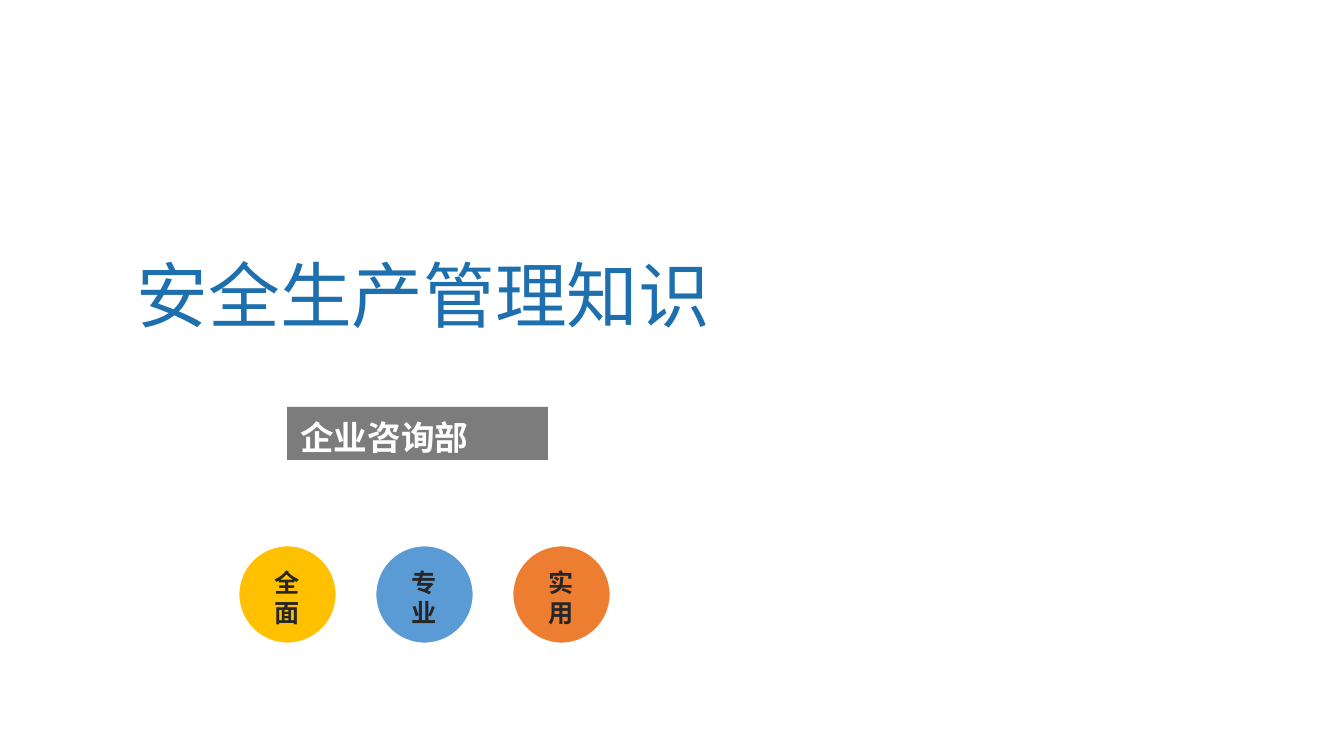
from lxml.etree import SubElement
from pptx import Presentation
from pptx.dml.color import RGBColor
from pptx.enum.shapes import MSO_SHAPE as SHAPE
from pptx.enum.text import MSO_ANCHOR as ANCHOR, PP_ALIGN as ALIGN
from pptx.oxml.ns import qn
from pptx.util import Pt

PX = 9144000 / 1344
FONT = "Noto Sans CJK SC"
COLORS = {
    "title": "1E6FAD", "bar": "7C7C7C", "white": "FFFFFF", "dark": "262626",
    "gold": "FFC000", "blue": "5B9BD5", "orange": "ED7D31",
}


def px(*values):
    return [round(v * PX) for v in values]


def write(s, text, size, color, align, anchor, spacing, top, bottom, bold=True):
    tf = s.text_frame
    tf.word_wrap = True
    tf.vertical_anchor = anchor
    tf.margin_top, tf.margin_bottom = px(top, bottom)
    p = tf.paragraphs[0]
    p.alignment = align
    p.line_spacing = spacing
    r = p.add_run()
    r.text = text
    r.font.size = Pt(size)
    r.font.bold = bold
    r.font.name = FONT
    r.font.color.rgb = RGBColor.from_string(COLORS[color])
    SubElement(r.font._element, qn("a:ea"), typeface=FONT)


prs = Presentation()
prs.slide_width, prs.slide_height = px(1344, 756)
slide = prs.slides.add_slide(prs.slide_layouts[6])

title = slide.shapes.add_textbox(*px(93, 144, 661, 193))
write(title, "安全生产管理知识", 38.4, "title", ALIGN.CENTER, ANCHOR.BOTTOM,
      1.1, 7, 0, bold=False)

bar = slide.shapes.add_shape(SHAPE.RECTANGLE, *px(287, 407, 261, 53))
bar.shadow.inherit = False
bar.fill.solid()
bar.fill.fore_color.rgb = RGBColor.from_string(COLORS["bar"])
bar.line.fill.background()
write(bar, "企业咨询部", 18, "white", ALIGN.JUSTIFY, ANCHOR.TOP, Pt(23), 7, 7)

for i, (word, color) in enumerate([("全面", "gold"), ("专业", "blue"), ("实用", "orange")]):
    s = slide.shapes.add_shape(SHAPE.OVAL, *px(238 + 137 * i, 545, 99, 99))
    s.shadow.inherit = False
    s.fill.solid()
    s.fill.fore_color.rgb = RGBColor.from_string(COLORS[color])
    s.line.color.rgb = RGBColor.from_string(COLORS["white"])
    s.line.width = Pt(1.5)
    write(s, word, 13.5, "dark", ALIGN.CENTER, ANCHOR.MIDDLE, Pt(16), 10, 4)

prs.save("out.pptx")
